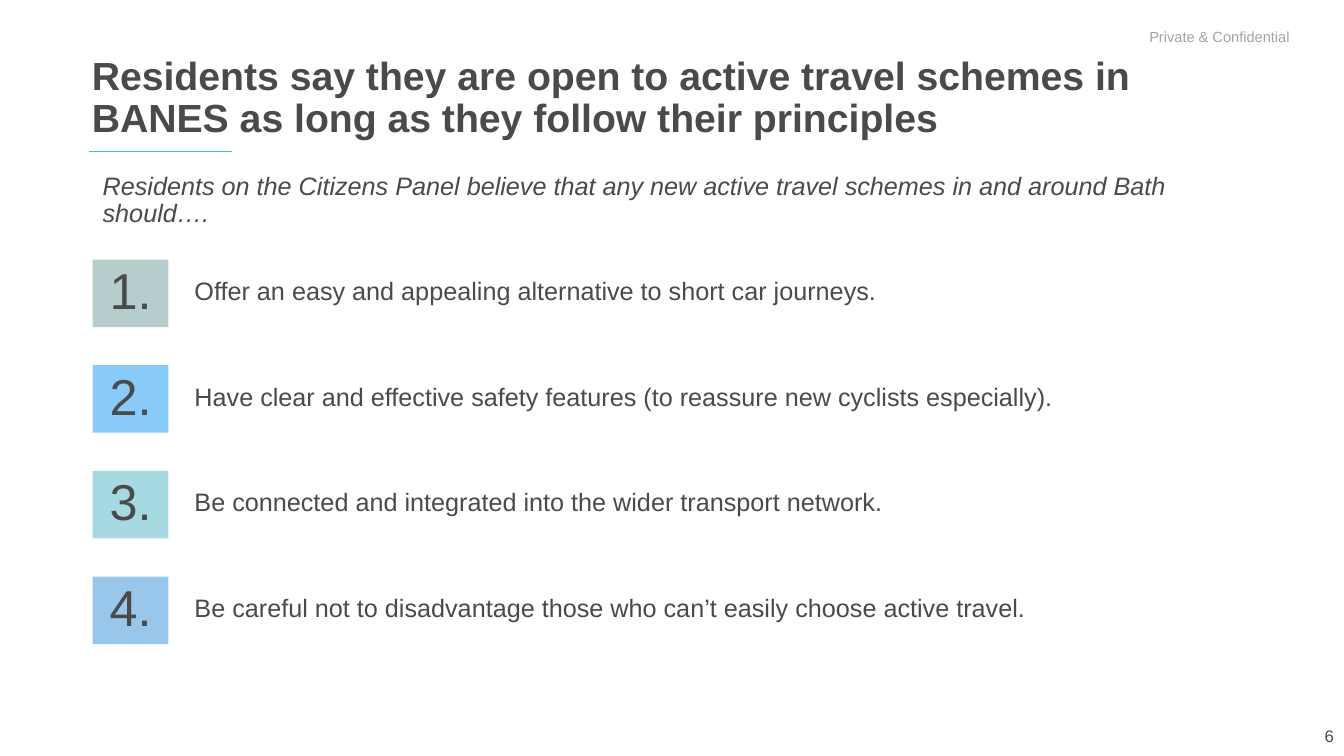
from pptx import Presentation
from pptx.dml.color import RGBColor as RGB
from pptx.enum.shapes import MSO_CONNECTOR as Line, MSO_SHAPE as Shape
from pptx.enum.text import MSO_ANCHOR as Anchor, PP_ALIGN as Align
from pptx.oxml.ns import qn
from pptx.util import Inches, Pt
from lxml.etree import SubElement

WIDE, HIGH = Inches(13.33), Inches(7.5)
COL, ROW = WIDE / 100, HIGH / 100
PITCH = 13.98

WHITE = RGB(0xFF, 0xFF, 0xFF)
DARK = RGB(0x4A, 0x4A, 0x4A)
GREY = RGB(0xA4, 0xA4, 0xA4)
GREEN = RGB(0x37, 0xCE, 0xAC)

ITEMS = [
    ("Offer an easy and appealing alternative to short car journeys.",
     RGB(0xB5, 0xCD, 0xCD)),
    ("Have clear and effective safety features (to reassure new cyclists especially).",
     RGB(0x89, 0xCB, 0xF8)),
    ("Be connected and integrated into the wider transport network.",
     RGB(0xA6, 0xD9, 0xE2)),
    ("Be careful not to disadvantage those who can’t easily choose active travel.",
     RGB(0x99, 0xC7, 0xEC)),
]


def grid(x, y, w, h):
    """Turn columns and rows into slide lengths."""
    return round(x * COL), round(y * ROW), round(w * COL), round(h * ROW)


def write(slide, box, text, size, fill=None, color=DARK, align=Align.LEFT,
          space=0.9, anchor=Anchor.MIDDLE, inset=0.1, **style):
    """Place text in a plain box, or in a rectangle if a fill is given."""
    if fill is None:
        shape = slide.shapes.add_textbox(*grid(*box))
    else:
        shape = slide.shapes.add_shape(Shape.RECTANGLE, *grid(*box))
        shape.shadow.inherit = False
        shape.fill.solid()
        shape.fill.fore_color.rgb = fill
        shape.line.fill.background()
    frame = shape.text_frame
    form = {"word_wrap": True, "vertical_anchor": anchor,
            "margin_left": Inches(inset)}
    for name, value in form.items():
        setattr(frame, name, value)
    para = frame.paragraphs[0]
    para.text = text
    para.alignment = align
    para.line_spacing = space
    para.font.color.rgb = color
    for name, value in {"name": "Arial", "size": Pt(size), **style}.items():
        setattr(para.font, name, value)


def header(slide, x, y, w):
    write(slide, (x, y, w, 12.93),
          "Residents say they are open to active travel schemes in BANES "
          "as long as they follow their principles",
          28, anchor=Anchor.TOP, inset=0, bold=True)
    left, top, wide, _ = grid(x - 0.23, y + 13.2, 10.65, 0)
    rule = slide.shapes.add_connector(Line.STRAIGHT, left, top, left + wide, top)
    rule.line.color.rgb = GREEN
    rule.line.width = Pt(1)
    SubElement(rule.element.spPr, qn("a:effectLst"))
    write(slide, (x + 0.07, y + 16.93, 80.8, 5.73),
          "Residents on the Citizens Panel believe that any new active travel "
          "schemes in and around Bath should….", 18, italic=True)


def entry(slide, x, y, number, text, fill):
    write(slide, (x, y, 5.63, 8.93), f"{number}.", 36, fill, align=Align.CENTER)
    write(slide, (x + 6.83, y, 80.8, 8.67), text, 18)


def margins(slide):
    write(slide, (84.77, 2.53, 12.23, 4.67), "Private & Confidential", 10.5,
          WHITE, GREY, space=1)
    write(slide, (77.5, 94.67, 22.5, 5.33), "6", 12, align=Align.RIGHT, space=1)


def main():
    deck = Presentation()
    deck.slide_width, deck.slide_height = WIDE, HIGH
    slide = deck.slides.add_slide(deck.slide_layouts[6])
    margins(slide)
    header(slide, 6.83, 6.8, 87.7)
    for i, (text, fill) in enumerate(ITEMS):
        entry(slide, 6.9, 34.33 + i * PITCH, i + 1, text, fill)
    deck.save("out.pptx")


if __name__ == "__main__":
    main()
